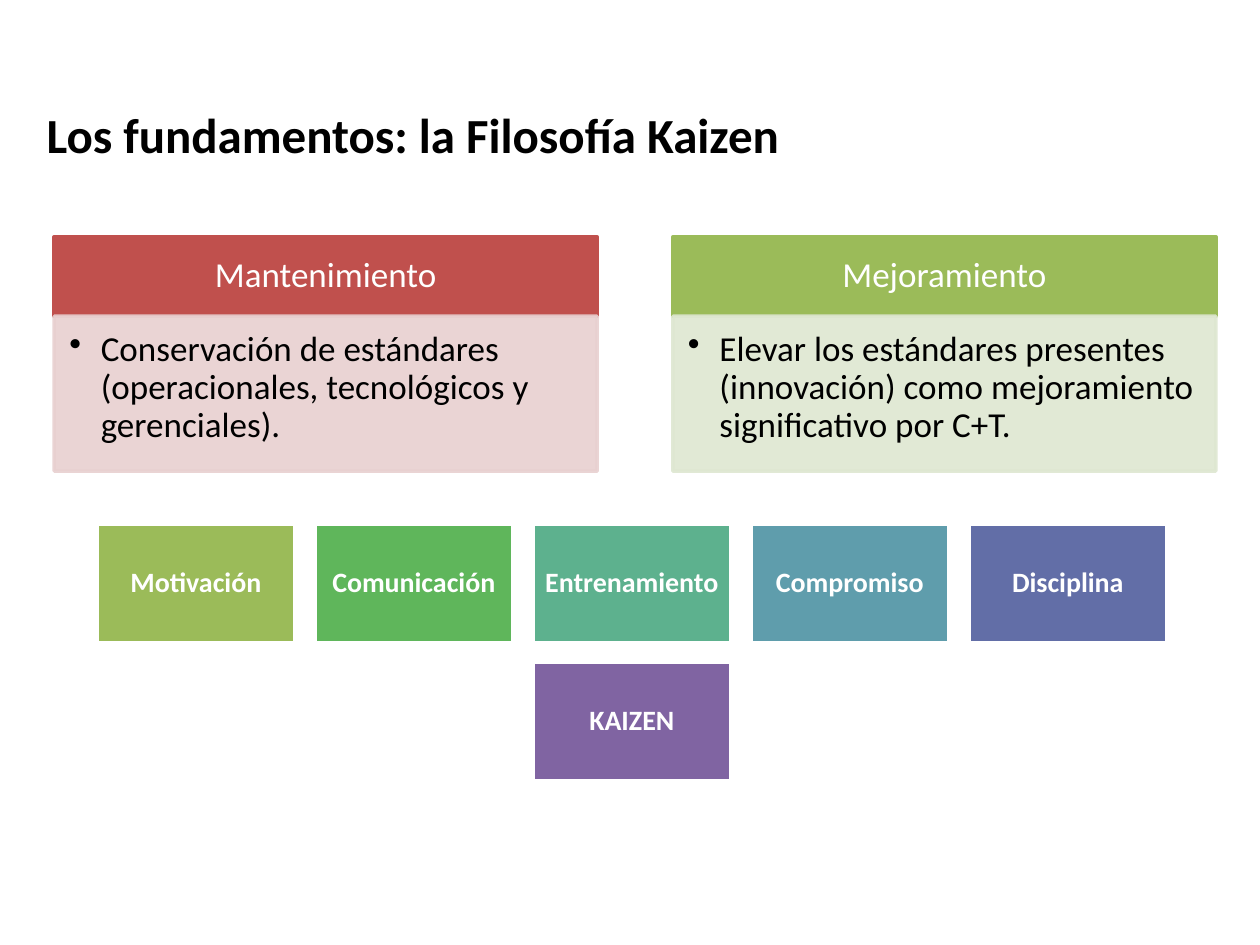
"""Build the slide on the foundations of the Kaizen philosophy."""
import pptx
import pptx.util
import pptx.dml.color
import pptx.enum.shapes
import pptx.enum.text
import pptx.oxml.ns
import lxml.etree

Inches = pptx.util.Inches
ANCHOR = pptx.enum.text.MSO_ANCHOR
ALIGN = pptx.enum.text.PP_ALIGN

TITLE = "Los fundamentos: la Filosofía Kaizen"
PANELS = [
    ("Mantenimiento", "C0504D", "E8D0D0",
     "Conservación de estándares (operacionales, tecnológicos y gerenciales)."),
    ("Mejoramiento", "9BBB59", "DEE7D1",
     "Elevar los estándares presentes (innovación) como mejoramiento significativo por C+T."),
]
TILES = [
    ("Motivación", "9BBB59"),
    ("Comunicación", "5FB65B"),
    ("Entrenamiento", "5DB18E"),
    ("Compromiso", "5F9DAC"),
    ("Disciplina", "626EA7"),
    ("KAIZEN", "8064A2"),
]
COLS = 5
THEME = {
    "font": "Calibri", "dark": "000000", "light": "FFFFFF",
    "title": 28, "panel": 20, "tile": 16, "line": 2, "alpha": 90,
}
HEAD = {"size": THEME["panel"], "color": THEME["light"], "pad": (0.16, 0.09, 0.16, 0.09)}
BODY = {"size": THEME["panel"], "color": THEME["dark"], "pad": (0.12, 0.12, 0.16, 0.17),
        "align": ALIGN.LEFT, "anchor": ANCHOR.TOP}
TILE = {"size": THEME["tile"], "color": THEME["light"], "pad": (0.07,) * 4, "bold": True}


def rgb(code):
    return pptx.dml.color.RGBColor.from_string(code)


def apply(item, values):
    for name, value in values.items():
        setattr(item, name, value)


def write(frame, text, size, color, pad, bold=False,
          align=ALIGN.CENTER, anchor=ANCHOR.MIDDLE, space=0.9):
    left, top, right, low = map(Inches, pad)
    frame.text = text
    apply(frame, {"word_wrap": True, "vertical_anchor": anchor,
                  "margin_left": left, "margin_top": top,
                  "margin_right": right, "margin_bottom": low})
    para = frame.paragraphs[0]
    apply(para, {"alignment": align, "line_spacing": space})
    font = para.runs[0].font
    apply(font, {"name": THEME["font"], "size": pptx.util.Pt(size), "bold": bold})
    font.color.rgb = rgb(color)


def box(slide, place, text, fill, edge, style):
    shape = slide.shapes.add_shape(
        pptx.enum.shapes.MSO_SHAPE.RECTANGLE, *map(Inches, place))
    shape.shadow.inherit = False
    shape.fill.solid()
    shape.fill.fore_color.rgb = rgb(fill)
    shape.line.color.rgb = rgb(edge)
    shape.line.width = pptx.util.Pt(THEME["line"])
    write(shape.text_frame, text, **style)
    return shape


def fade(shape):
    qn = pptx.oxml.ns.qn
    for color in shape.element.spPr.iter(qn("a:srgbClr")):
        lxml.etree.SubElement(color, qn("a:alpha"), val=str(THEME["alpha"] * 1000))


def bullet(shape):
    props = shape.text_frame.paragraphs[0]._p.get_or_add_pPr()
    props.set("marL", str(Inches(0.25)))
    props.set("indent", str(Inches(-0.25)))
    lxml.etree.SubElement(props, pptx.oxml.ns.qn("a:buChar"), char="•")


def main():
    deck = pptx.Presentation()
    apply(deck, {"slide_width": Inches(10), "slide_height": Inches(7.5)})
    slide = deck.slides.add_slide(deck.slide_layouts[5])

    title = slide.shapes.title
    apply(title, {"left": Inches(0.27), "top": Inches(0.44),
                  "width": Inches(7.59), "height": Inches(1.25)})
    write(title.text_frame, TITLE, THEME["title"], THEME["dark"],
          (0.1, 0.05, 0.1, 0.05), bold=True, align=ALIGN.LEFT, space=1.0)

    left, top, wide, head, body, step = 0.43, 1.88, 4.31, 0.63, 1.23, 4.91
    for col, (name, dark, pale, text) in enumerate(PANELS):
        x = left + col * step
        box(slide, (x, top, wide, head), name, dark, dark, HEAD)
        panel = box(slide, (x, top + head, wide, body), text, pale, pale, BODY)
        fade(panel)
        bullet(panel)

    wide, high, gap, top = 1.57, 0.94, 0.16, 4.16
    left = 0.77
    for num, (name, fill) in enumerate(TILES):
        row, col = divmod(num, COLS)
        count = min(COLS, len(TILES) - row * COLS)
        x = left + (col + (COLS - count) / 2) * (wide + gap)
        y = top + row * (high + gap)
        box(slide, (x, y, wide, high), name, fill, THEME["light"], TILE)

    deck.save("out.pptx")


if __name__ == "__main__":
    main()
